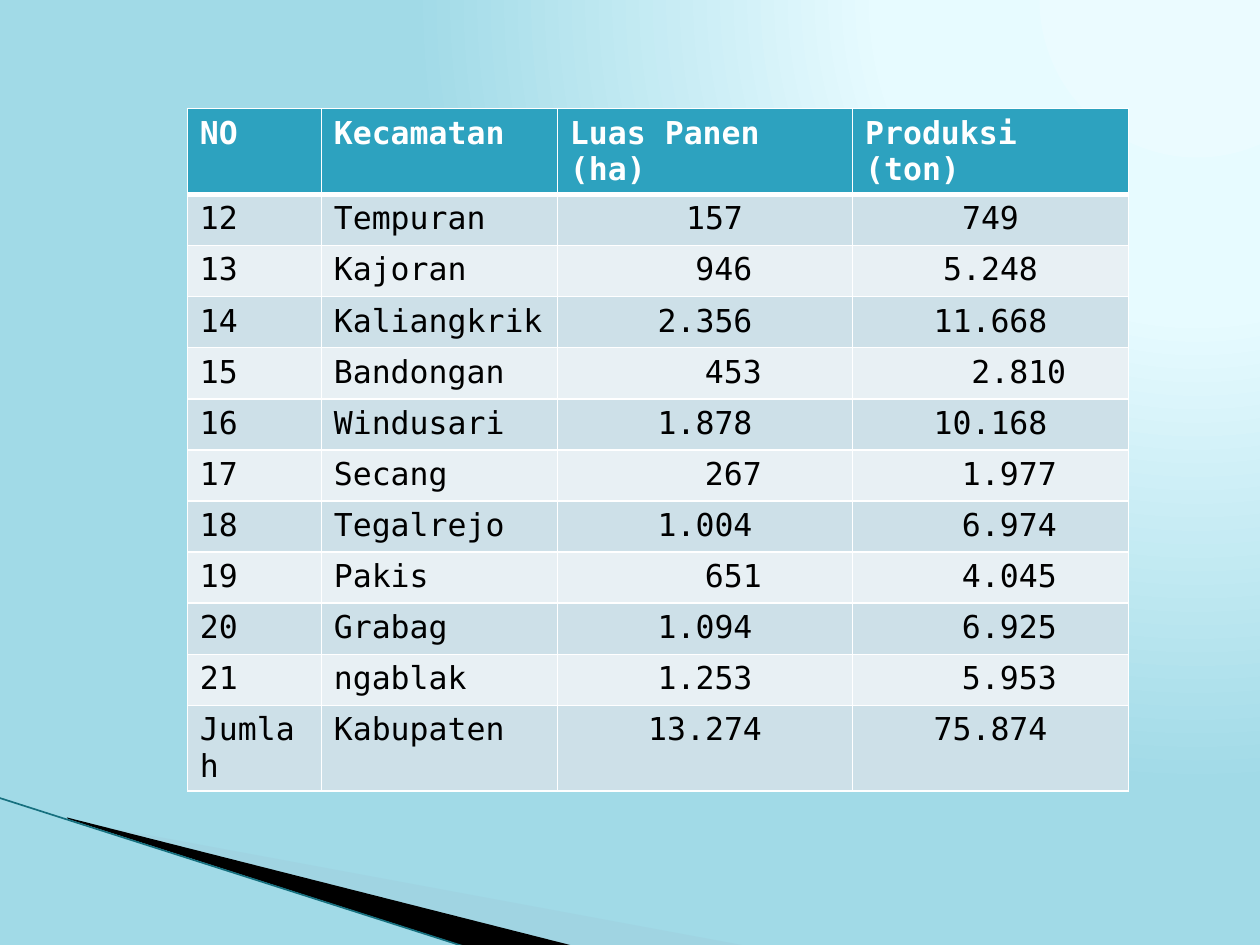
from lxml import etree
from pptx import Presentation
from pptx.dml.color import RGBColor
from pptx.enum.shapes import MSO_CONNECTOR
from pptx.enum.text import PP_ALIGN
from pptx.oxml import parse_xml
from pptx.oxml.ns import nsdecls, qn
from pptx.util import Cm, Pt

STRAIGHT = MSO_CONNECTOR.STRAIGHT
LEFT, CENTER = PP_ALIGN.LEFT, PP_ALIGN.CENTER
FONT = "DejaVu Sans Mono"
INK = {
    "white": "FFFFFF", "black": "000000", "head": "2DA2BF",
    "odd": "CDE0E8", "even": "E8F0F4", "wedge": "A0CBDC", "edge": "16707F",
    "glow": "EBFBFF", "mid": "E7FBFF", "sky": "A1DAE7",
}


def rgb(name):
    return RGBColor.from_string(INK[name])


def border(cell, side, width):
    cell._tc.get_or_add_tcPr().append(parse_xml(
        f'<a:{side} {nsdecls("a")} w="{Pt(width)}"><a:solidFill>'
        f'<a:srgbClr val="{INK["white"]}"/></a:solidFill></a:{side}>'))


prs = Presentation()
prs.slide_width, prs.slide_height = Cm(25.4), Cm(19.05)
slide = prs.slides.add_slide(prs.slide_layouts[6])
shapes = slide.shapes

# Background: round glow from the upper right
stops = "".join(
    f'<a:gs pos="{pos * 1000}"><a:srgbClr val="{INK[name]}"/></a:gs>'
    for pos, name in ((0, "glow"), (40, "mid"), (100, "sky")))
slide._element.cSld.insert(0, parse_xml(
    f'<p:bg {nsdecls("p", "a")}><p:bgPr><a:gradFill rotWithShape="1">'
    f'<a:gsLst>{stops}</a:gsLst><a:path path="circle">'
    '<a:fillToRect l="95000" t="-106000" r="5000" b="206000"/></a:path>'
    '</a:gradFill><a:effectLst/></p:bgPr></p:bg>'))

# Corner wedges: the outlines reach beyond their frames
wedges = (
    ("wedge", 40, (1.98, 13.89, 10.57, 4.01),
     ((1.4, 16.54), (15.11, 19.08), (11.58, 19.08), (1.4, 16.51))),
    ("black", 100, (-0.15, 16.08, 10.57, 2.34),
     ((1.35, 16.48), (11.61, 19.08), (9.45, 19.1), (1.37, 16.51))),
)
for name, alpha, frame, points in wedges:
    (x, y), *rest = [(Cm(a), Cm(b)) for a, b in points]
    path = shapes.build_freeform(x, y)
    path.add_line_segments(rest, close=True)
    wedge = path.convert_to_shape()
    wedge.shadow.inherit = False
    wedge.fill.solid()
    wedge.fill.fore_color.rgb = rgb(name)
    wedge.line.fill.background()
    if alpha < 100:
        tint = wedge._element.spPr.find(qn("a:solidFill"))[0]
        etree.SubElement(tint, qn("a:alpha"), val=str(alpha * 1000))
    left, top, wide, high = map(Cm, frame)
    dx, dy = wedge.left - left, wedge.top - top
    wedge.left, wedge.top, wedge.width, wedge.height = left, top, wide, high
    for outline in wedge._element.iter(qn("a:path")):
        outline.set("w", str(wide))
        outline.set("h", str(high))
        for dot in outline.iter(qn("a:pt")):
            dot.set("x", str(int(dot.get("x")) + dx))
            dot.set("y", str(int(dot.get("y")) + dy))

# Line along the wedge
edge = shapes.add_connector(STRAIGHT, Cm(-0.03), Cm(16.08), Cm(9.42), Cm(19.1))
edge.line.color.rgb = rgb("edge")
edge.line.width = Pt(0.95)
etree.SubElement(edge._element.spPr, qn("a:effectLst"))

# Table: the last two values of a row are shifts in characters
heads = ("NO", "Kecamatan", "Luas Panen (ha)", "Produksi (ton)")
rows = (
    ("12", "Tempuran", "157", "749", 1, 0),
    ("13", "Kajoran", "946", "5.248", 2, 0),
    ("14", "Kaliangkrik", "2.356", "11.668", 0, 0),
    ("15", "Bandongan", "453", "2.810", 3, 3),
    ("16", "Windusari", "1.878", "10.168", 0, 0),
    ("17", "Secang", "267", "1.977", 3, 2),
    ("18", "Tegalrejo", "1.004", "6.974", 0, 2),
    ("19", "Pakis", "651", "4.045", 3, 2),
    ("20", "Grabag", "1.094", "6.925", 0, 2),
    ("21", "ngablak", "1.253", "5.953", 0, 2),
    ("Jumlah", "Kabupaten", "13.274", "75.874", 0, 0),
)
widths = (2.7, 4.76, 5.95, 5.56)
tall = 1.03
count = len(rows) + 1
table = shapes.add_table(count, len(widths), Cm(3.78), Cm(2.19),
                         Cm(sum(widths)), Cm(tall * count)).table
for col, width in zip(table.columns, widths):
    col.width = Cm(width)

for r, row in enumerate(((*heads, 0, 0), *rows)):
    table.rows[r].height = Cm(tall)
    fill = "head" if r == 0 else "odd" if r % 2 else "even"
    for c, (text, shift) in enumerate(zip(row[:4], (0, 0, *row[4:]))):
        cell = table.cell(r, c)
        for side in ("lnL", "lnR", "lnT", "lnB"):
            thick = (r, side) in ((0, "lnB"), (1, "lnT"))
            border(cell, side, 3 if thick else 1)
        cell.fill.solid()
        cell.fill.fore_color.rgb = rgb(fill)
        cell.margin_left = Cm(0.25 + 0.38 * shift)
        para = cell.text_frame.paragraphs[0]
        para.alignment = CENTER if r and c > 1 else LEFT
        run = para.add_run()
        run.text = text
        run.font.name = FONT
        run.font.size = Pt(18)
        run.font.bold = r == 0
        run.font.color.rgb = rgb("black" if r else "white")

prs.save("out.pptx")
